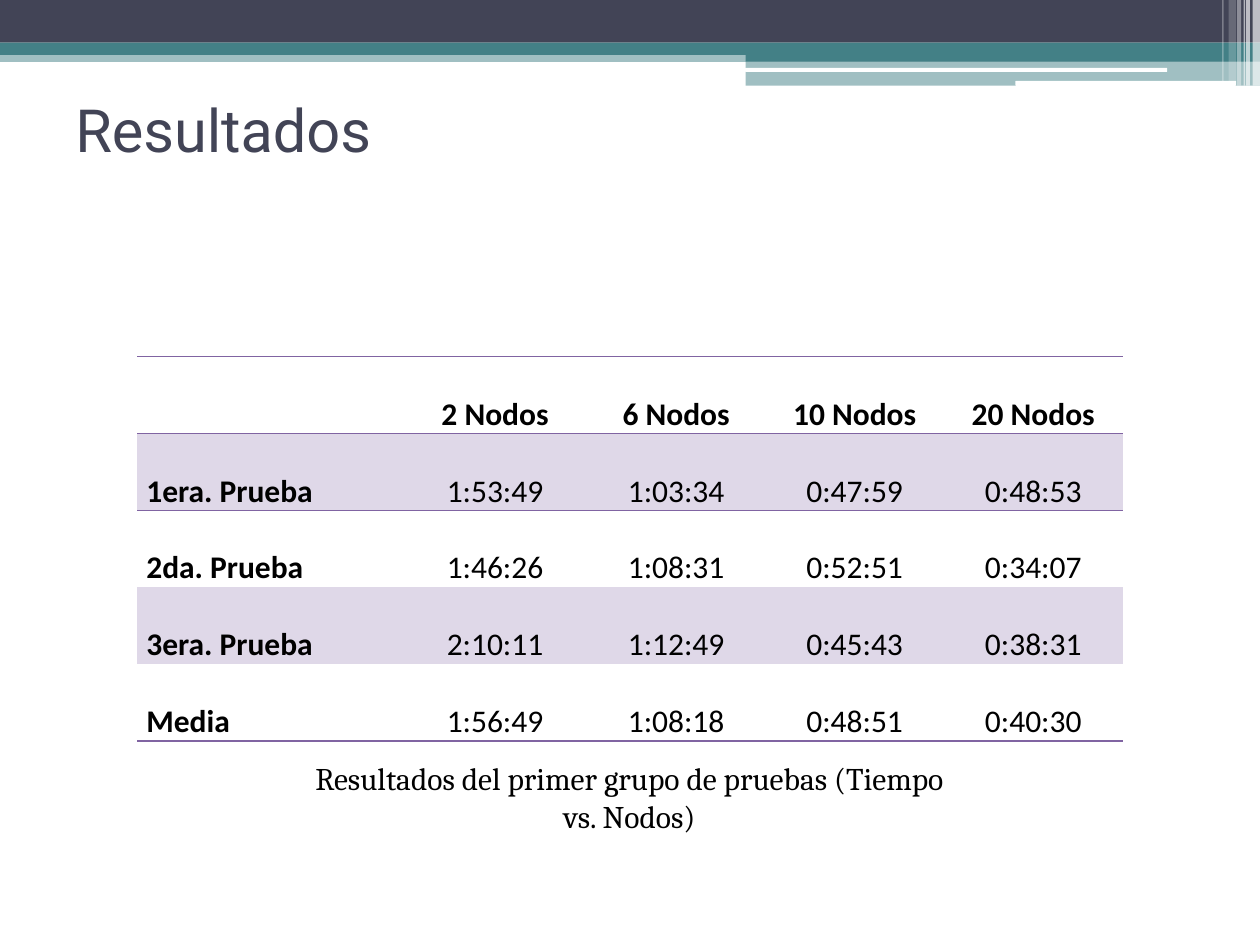
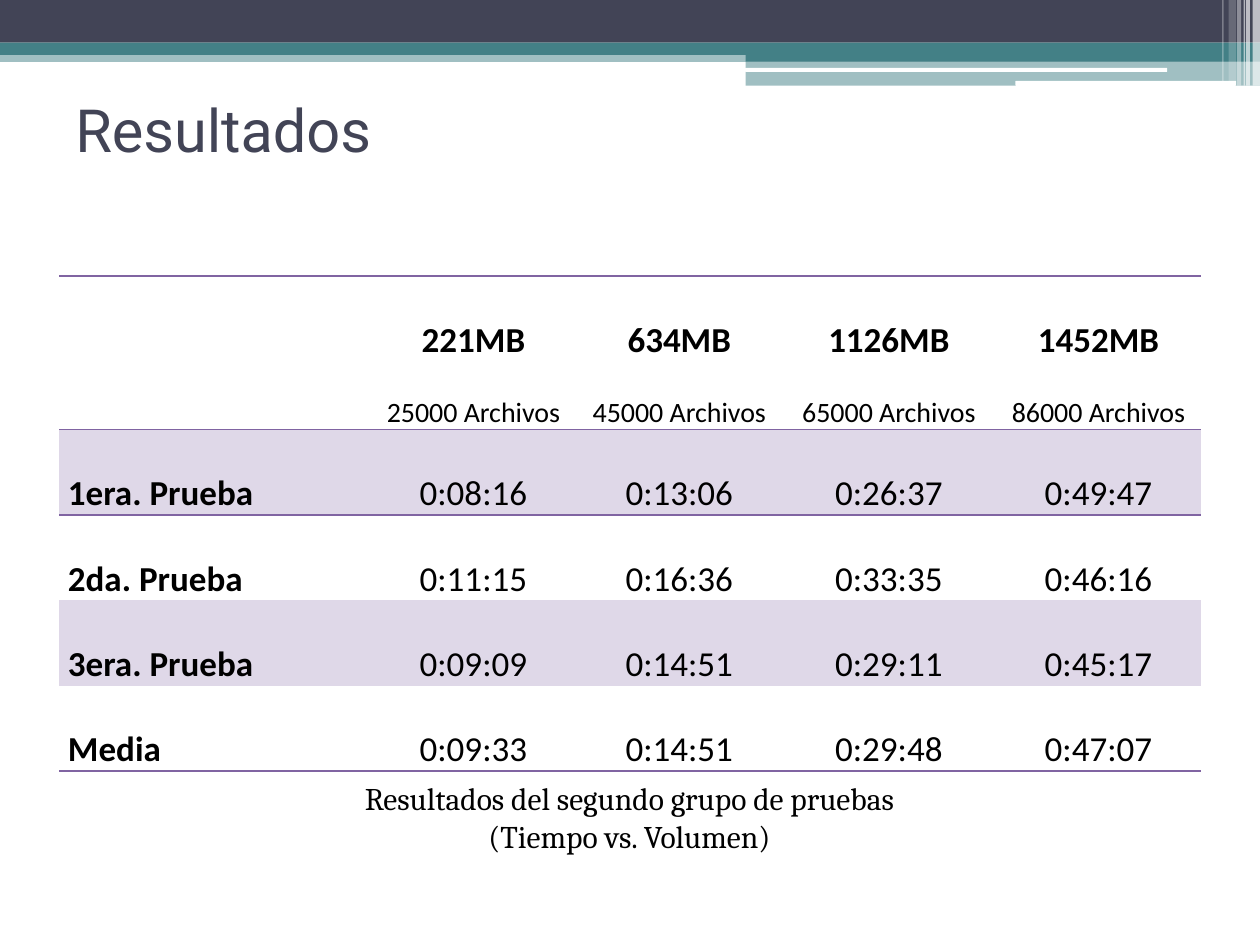
import pptx
import pptx.util
import pptx.dml.color
import pptx.enum.shapes
import pptx.enum.text
import pptx.oxml.ns
import lxml.etree

Cm = pptx.util.Cm
Pt = pptx.util.Pt
SHAPE = pptx.enum.shapes.MSO_SHAPE
ALIGN = pptx.enum.text.PP_ALIGN
ANCHOR = pptx.enum.text.MSO_ANCHOR
qn = pptx.oxml.ns.qn

NAVY, TEAL, WHITE, BLACK = "424456", "438086", "FFFFFF", "000000"
PURPLE, LILAC = "8064A2", "DFD8E8"
PLAIN_TABLE_STYLE = "{2D5ABB26-0587-4C30-8999-92F81FD0307C}"
ROW_NAMES = ["1era. Prueba", "2da. Prueba", "3era. Prueba", "Media"]

# left, top, width, height in cm, colour, opacity in percent
BANDS = [
    (0, 1.02, 25.4, 0.23, TEAL, 50),
    (0, 0, 25.4, 0.86, NAVY, 100),
    (0, 0.86, 25.4, 0.25, TEAL, 100),
    (15.03, 0.99, 10.37, 0.25, TEAL, 100),
    (15.03, 1.23, 10.37, 0.5, TEAL, 50),
]
ROUNDED_LINES = [(15.02, 1.37, 8.51, 0.08), (20.47, 1.63, 4.45, 0.1)]
# left, width, height in cm, opacity in percent
STRIPES = [
    (25.25, 0.15, 1.73, 65),
    (25.12, 0.08, 1.73, 65),
    (25.07, 0.03, 1.73, 60),
    (24.94, 0.08, 1.73, 40),
    (24.77, 0.15, 1.63, 20),
    (24.64, 0.03, 1.63, 30),
]


def color(hex_code):
    return pptx.dml.color.RGBColor.from_string(hex_code)


def write(para, text, font="Calibri", size=18, ink=BLACK, bold=False,
          align=ALIGN.LEFT, spacing=None):
    """Add one formatted span to the paragraph."""
    para.alignment = align
    if spacing:
        para.line_spacing = spacing
    span = para.add_run()
    span.text = text
    span.font.name = font
    span.font.size = Pt(size)
    span.font.bold = bold
    span.font.color.rgb = color(ink)


def add_border(cell, side):
    """Draw a purple line on side "T" or "B"; call before the cell is filled."""
    properties = cell._tc.get_or_add_tcPr()
    line = lxml.etree.SubElement(properties, qn("a:ln" + side), w=str(Pt(1)))
    fill = lxml.etree.SubElement(line, qn("a:solidFill"))
    lxml.etree.SubElement(fill, qn("a:srgbClr"), val=PURPLE)


class ResultsDeck:
    def __init__(self):
        self.deck = pptx.Presentation()
        self.deck.slide_width, self.deck.slide_height = Cm(25.4), Cm(19.05)
        self.page = None

    def add_page(self, title):
        self.page = self.deck.slides.add_slide(self.deck.slide_layouts[6])
        for *place, fill, opacity in BANDS:
            self.add_block(place, fill, opacity)
        for place in ROUNDED_LINES:
            self.add_block(place, WHITE, kind=SHAPE.ROUNDED_RECTANGLE)
        for left, width, height, opacity in STRIPES:
            self.add_block((left, 0, width, height), WHITE, opacity)
        self.add_title(title)

    def add_block(self, place, fill, opacity=100, kind=SHAPE.RECTANGLE):
        block = self.page.shapes.add_shape(kind, *map(Cm, place))
        block.shadow.inherit = False
        block.line.fill.background()
        block.fill.solid()
        block.fill.fore_color.rgb = color(fill)
        if opacity < 100:
            shade = block._element.spPr.find(".//" + qn("a:srgbClr"))
            lxml.etree.SubElement(shade, qn("a:alpha"), val=str(opacity * 1000))
        return block

    def add_title(self, text):
        box = self.page.shapes.add_textbox(Cm(1.27), Cm(1.12), Cm(22.86), Cm(2.97))
        frame = box.text_frame
        frame.word_wrap = True
        frame.vertical_anchor = ANCHOR.MIDDLE
        write(frame.paragraphs[0], text, font="Roboto", size=34, ink=NAVY)

    def add_caption(self, top, text):
        frame = self.add_block((6.05, top, 13.28, 1.19), WHITE).text_frame
        frame.word_wrap = True
        frame.vertical_anchor = ANCHOR.MIDDLE
        write(frame.paragraphs[0], text, font="Cambria", align=ALIGN.CENTER)

    def add_table(self, left, top, widths, heights, headers, times, size):
        """Add a table of times; each header is a tuple of one or two lines."""
        rows = [[()] + headers]
        rows += [[(name,)] + [(time,) for time in line.split()]
                 for name, line in zip(ROW_NAMES, times)]
        table = self.page.shapes.add_table(
            len(rows), len(widths), Cm(left), Cm(top),
            Cm(sum(widths)), Cm(sum(heights))).table
        table.first_row = table.horz_banding = False
        table._tbl.tblPr.find(qn("a:tableStyleId")).text = PLAIN_TABLE_STYLE
        for column, width in zip(table.columns, widths):
            column.width = Cm(width)
        for row, height in zip(table.rows, heights):
            row.height = Cm(height)
        for i, row in enumerate(rows):
            for j, lines in enumerate(row):
                cell = table.cell(i, j)
                self.fill_cell(cell, lines, size, i == 0 or j == 0,
                               ALIGN.CENTER if j else ALIGN.LEFT)
                if i < 2:
                    add_border(cell, "T")
                if i in (0, len(rows) - 1):
                    add_border(cell, "B")
                if i % 2:
                    cell.fill.solid()
                    cell.fill.fore_color.rgb = color(LILAC)
                else:
                    cell.fill.background()

    def fill_cell(self, cell, lines, size, bold, align):
        cell.margin_left = cell.margin_right = Cm(0.18)
        cell.margin_top = cell.margin_bottom = 0
        para = cell.text_frame.paragraphs[0]
        for k, line in enumerate(lines):
            if k:
                para.add_line_break()
            write(para, line, size=size - 4 * k, bold=bold and k == 0,
                  align=align, spacing=2.0)


def main():
    results = ResultsDeck()

    results.add_page("Resultados")
    results.add_table(
        2.77, 7.19, [5.36, 3.7, 3.6, 3.6, 3.6], [1.55] * 5,
        [("2 Nodos",), ("6 Nodos",), ("10 Nodos",), ("20 Nodos",)],
        ["1:53:49 1:03:34 0:47:59 0:48:53",
         "1:46:26 1:08:31 0:52:51 0:34:07",
         "2:10:11 1:12:49 0:45:43 0:38:31",
         "1:56:49 1:08:18 0:48:51 0:40:30"], size=18)
    results.add_caption(
        15.47, "Resultados del primer grupo de pruebas (Tiempo vs. Nodos)")

    results.add_page("Resultados")
    results.add_table(
        1.19, 5.56, [6.28, 4.15, 4.15, 4.3, 4.15], [3.1] + [1.72] * 4,
        [("221MB", "25000 Archivos"), ("634MB", "45000 Archivos"),
         ("1126MB", "65000 Archivos"), ("1452MB", "86000 Archivos")],
        ["0:08:16 0:13:06 0:26:37 0:49:47",
         "0:11:15 0:16:36 0:33:35 0:46:16",
         "0:09:09 0:14:51 0:29:11 0:45:17",
         "0:09:33 0:14:51 0:29:48 0:47:07"], size=20)
    results.add_caption(
        15.88, "Resultados del segundo grupo de pruebas (Tiempo vs. Volumen)")

    results.deck.save("out.pptx")


if __name__ == "__main__":
    main()
